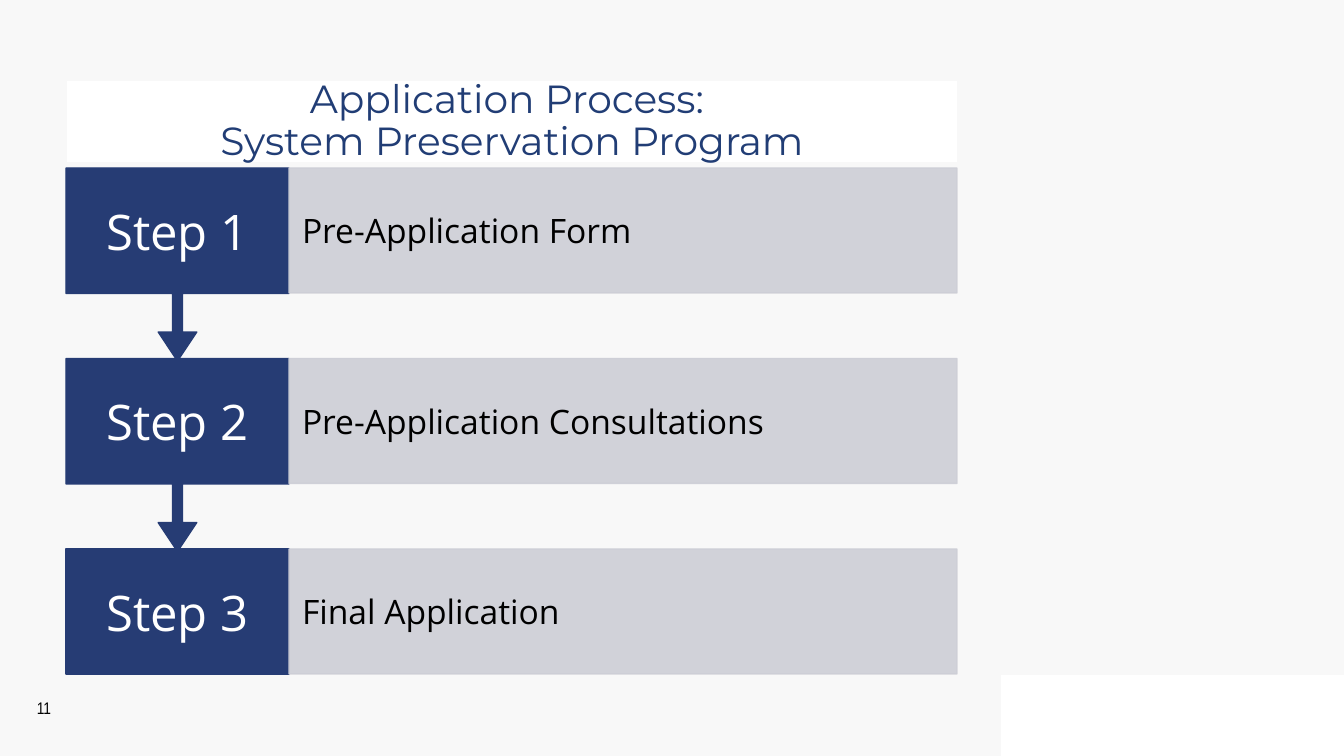
from lxml import etree
from pptx import Presentation
from pptx.dml.color import RGBColor
from pptx.enum.shapes import MSO_SHAPE
from pptx.enum.text import MSO_ANCHOR, MSO_AUTO_SIZE, PP_ALIGN
from pptx.oxml.ns import qn
from pptx.util import Pt

RECT, CALLOUT = MSO_SHAPE.RECTANGLE, MSO_SHAPE.DOWN_ARROW_CALLOUT
LEFT, CENTER = PP_ALIGN.LEFT, PP_ALIGN.CENTER
MIDDLE, NO_FIT = MSO_ANCHOR.MIDDLE, MSO_AUTO_SIZE.NONE

# Content
TITLE = "Application Process: \vSystem Preservation Program"
STEPS = [
    ("Step 1", "Pre-Application Form"),
    ("Step 2", "Pre-Application Consultations"),
    ("Step 3", "Final Application"),
]
PAGE_NUMBER = "11"

COLORS = {
    "background": "F8F8F8", "white": "FFFFFF", "black": "000000",
    "title": "213D75", "step": "263C74", "detail": "CDCED6",
}

# Layout in px
SLIDE_W, SLIDE_H = 1344, 756
STEP_X, STEP_W, STEP_H = 66, 223, 125
DETAIL_X, DETAIL_W = STEP_X + STEP_W, 668
FIRST_Y, LAST_Y = 168, 549
CALLOUT_H = 193
CALLOUT_ADJUSTMENTS = (0.05, 0.1, 0.15, 0.65)


def px(n):
    return round(n * 914400 / 100.8)


def rgb(name):
    return RGBColor.from_string(COLORS[name])


def put_text(shape, text, font="Open Sans", size=24, color="black",
             align=LEFT, margins=(10, 5), spacing=None):
    tf = shape.text_frame
    tf.word_wrap = True
    tf.auto_size = NO_FIT
    tf.vertical_anchor = MIDDLE
    tf.margin_left = tf.margin_right = px(margins[0])
    tf.margin_top = tf.margin_bottom = px(margins[1])
    p = tf.paragraphs[0]
    p.text = text
    p.alignment = align
    p.line_spacing = spacing
    for r in p.runs:
        r.font.name = font
        r.font.size = Pt(size)
        r.font.color.rgb = rgb(color)


def add_block(s, kind, x, y, w, h, color, outlined=True, opacity=None):
    sp = s.shapes.add_shape(kind, px(x), px(y), px(w), px(h))
    sp.shadow.inherit = False
    sp.fill.solid()
    sp.fill.fore_color.rgb = rgb(color)
    if outlined:
        sp.line.color.rgb = rgb(color)
        sp.line.width = Pt(1)
    else:
        sp.line.fill.background()
    if opacity:
        for clr in sp._element.spPr.iter(qn("a:srgbClr")):
            etree.SubElement(clr, qn("a:alpha"), val=str(opacity * 1000))
    return sp


def main():
    prs = Presentation()
    prs.slide_width, prs.slide_height = px(SLIDE_W), px(SLIDE_H)
    s = prs.slides.add_slide(prs.slide_layouts[5])
    s.background.fill.solid()
    s.background.fill.fore_color.rgb = rgb("background")

    # Corner panel and page number
    add_block(s, RECT, 1001, 675, 343, 81, "white", outlined=False)
    number = s.shapes.add_textbox(px(22), px(688), px(44), px(40))
    put_text(number, PAGE_NUMBER, font="Arial Narrow", size=12, align=CENTER)

    # Title
    title = s.shapes.title
    title.left, title.top, title.width, title.height = map(px, (67, 81, 890, 81))
    title.fill.solid()
    title.fill.fore_color.rgb = rgb("white")
    put_text(title, TITLE, font="Montserrat", size=28, color="title",
             align=CENTER, spacing=0.9)

    # Steps, last one first so that each arrow overlaps the step below it
    pitch = (LAST_Y - FIRST_Y) / (len(STEPS) - 1)
    for i, (label, detail) in reversed(list(enumerate(STEPS))):
        y = FIRST_Y + i * pitch
        if i < len(STEPS) - 1:
            step = add_block(s, CALLOUT, STEP_X, y, STEP_W, CALLOUT_H, "step")
            for n, value in enumerate(CALLOUT_ADJUSTMENTS):
                step.adjustments[n] = value
        else:
            step = add_block(s, RECT, STEP_X, y, STEP_W, STEP_H, "step")
        put_text(step, label, size=35, color="white", align=CENTER, margins=(16, 27))
        box = add_block(s, RECT, DETAIL_X, y, DETAIL_W, STEP_H, "detail", opacity=90)
        put_text(box, detail, margins=(13, 33))

    prs.save("out.pptx")


if __name__ == "__main__":
    main()
